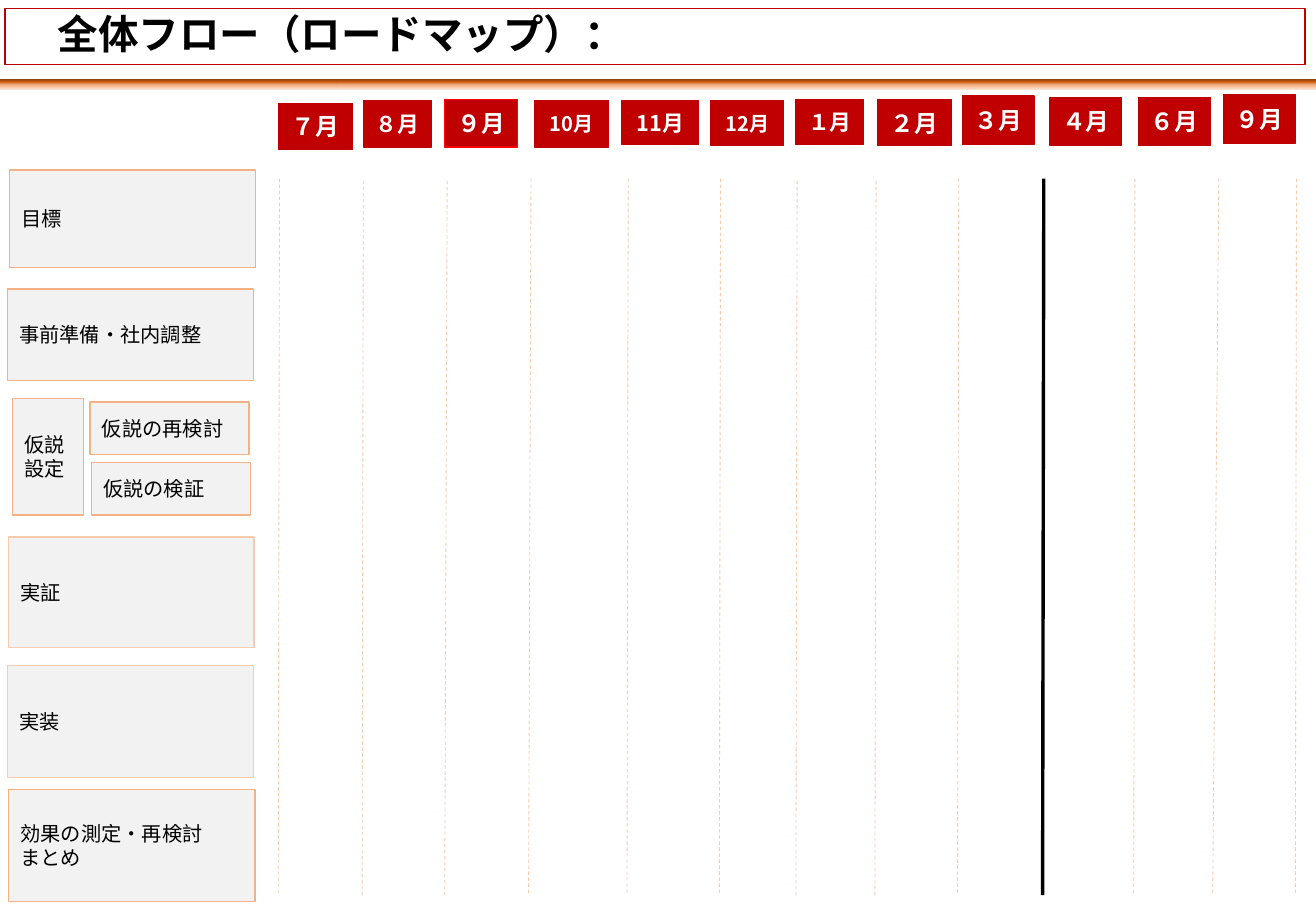
from dataclasses import dataclass

from lxml import etree
from pptx import Presentation
from pptx.dml.color import RGBColor
from pptx.enum.dml import MSO_LINE
from pptx.enum.shapes import MSO_CONNECTOR, MSO_SHAPE
from pptx.enum.text import MSO_ANCHOR, MSO_AUTO_SIZE, PP_ALIGN
from pptx.oxml.ns import qn
from pptx.util import Inches, Pt

RECT, STRAIGHT = MSO_SHAPE.RECTANGLE, MSO_CONNECTOR.STRAIGHT
LEFT, CENTER = PP_ALIGN.LEFT, PP_ALIGN.CENTER
MIDDLE, DASH = MSO_ANCHOR.MIDDLE, MSO_LINE.DASH
FIXED = MSO_AUTO_SIZE.NONE
CELL = Inches(0.1)  # grid of 108.3 columns by 75 rows


@dataclass(frozen=True)
class Theme:
    font: str = "Noto Sans CJK JP"
    ink: str = "000000"
    paper: str = "FFFFFF"
    red: str = "C00000"
    alert: str = "FF0000"
    panel: str = "F2F2F2"
    edge: str = "F4B183"
    pale: str = "F8CBAD"
    band: tuple = ((0, "843C0B"), (25, "C55A11"), (56, "F4B183"),
                   (79, "F8CBAD"), (100, "FBE5D6"))
    head: float = 24
    body: float = 12
    lead: float = 14.2
    large: float = 14
    mid: float = 12.9
    small: float = 11.9
    border: float = 0.75
    hair: float = 0.5
    thick: float = 2


def grid(*cells):
    return [round(cell * CELL) for cell in cells]


def paint(fill, color):
    fill.solid()
    fill.fore_color.rgb = RGBColor.from_string(color)


class Board:
    def __init__(self, slide, theme):
        self.slide, self.theme = slide, theme

    def stroke(self, line, color, width):
        paint(line.fill, color)
        line.width = Pt(width)

    def letter(self, shape, text, size, color, bold=False, align=LEFT, wrap=True):
        frame = shape.text_frame
        frame.text = text
        frame.word_wrap = wrap
        frame.auto_size = FIXED
        frame.vertical_anchor = MIDDLE
        for para in frame.paragraphs:
            para.alignment = align
            for run in para.runs:
                font = run.font
                font.name, font.size, font.bold = self.theme.font, Pt(size), bold
                font.color.rgb = RGBColor.from_string(color)
                east = etree.SubElement(font._element, qn("a:ea"))
                east.set("typeface", self.theme.font)

    def title(self, text, *box):
        shape = self.slide.shapes.title
        shape.left, shape.top, shape.width, shape.height = grid(*box)
        self.stroke(shape.line, self.theme.red, self.theme.border)
        self.letter(shape, text, self.theme.head, self.theme.ink, True)
        shape.text_frame.paragraphs[0].line_spacing = 0.9

    def rect(self, *box):
        shape = self.slide.shapes.add_shape(RECT, *grid(*box))
        shape.shadow.inherit = False
        return shape

    def label(self, text, edge, *box):
        shape = self.rect(*box)
        paint(shape.fill, self.theme.panel)
        self.stroke(shape.line, edge, self.theme.border)
        self.letter(shape, text, self.theme.body, self.theme.ink)
        for para in shape.text_frame.paragraphs:
            para.line_spacing = Pt(self.theme.lead)

    def month(self, text, size, edge, *box):
        shape = self.rect(*box)
        paint(shape.fill, self.theme.red)
        self.stroke(shape.line, edge, self.theme.border)
        self.letter(shape, text, size, self.theme.paper, True, CENTER, False)

    def band(self, *box):
        shape = self.rect(*box)
        shape.line.fill.background()
        shape.fill.gradient()
        shape.fill.gradient_angle = 270
        stops = shape._element.spPr.find(qn("a:gradFill")).find(qn("a:gsLst"))
        for stop in list(stops):
            stops.remove(stop)
        for share, color in self.theme.band:
            stop = etree.SubElement(stops, qn("a:gs"), pos=str(share * 1000))
            etree.SubElement(stop, qn("a:srgbClr"), val=color)

    def rule(self, color, width, dash, *ends):
        line = self.slide.shapes.add_connector(STRAIGHT, *grid(*ends))
        self.stroke(line.line, color, width)
        if dash:
            line.line.dash_style = dash
        etree.SubElement(line._element.spPr, qn("a:effectLst"))


def main():
    deck = Presentation()
    deck.slide_width, deck.slide_height = grid(108.3, 75)
    theme = Theme()
    board = Board(deck.slides.add_slide(deck.slide_layouts[5]), theme)

    # Title and the band below it
    board.title("　全体フロー（ロードマップ）：", 0.4, 0.7, 107, 4.6)
    for left, width in ((27.7, 80.6), (0, 27.7)):
        board.band(left, 6.5, width, 0.9)

    # Phases down the left side
    edge, pale = theme.edge, theme.pale
    for text, color, *box in (
        ("目標", edge, 0.8, 14, 20.2, 8),
        ("事前準備・社内調整", edge, 0.6, 23.8, 20.3, 7.5),
        ("仮説設定", edge, 1, 32.8, 5.9, 9.6),
        ("仮説の再検討", edge, 7.4, 33.1, 13.1, 4.3),
        ("仮説の検証", edge, 7.5, 38.1, 13.1, 4.3),
        ("実証", pale, 0.7, 44.2, 20.2, 9.1),
        ("実装", pale, 0.6, 54.8, 20.3, 9.2),
        ("効果の測定・再検討\nまとめ", edge, 0.7, 65, 20.3, 9.2),
    ):
        board.label(text, color, *box)

    # Month dividers: top column, top row, lean to the left
    for col, row, lean in (
        (23, 14.7, 0.1), (29.9, 14.9, 0.1), (36.8, 14.9, 0.2),
        (43.7, 14.7, 0.2), (51.7, 14.7, 0.1), (59.3, 14.7, 0.1),
        (65.6, 14.9, 0.1), (72.1, 14.9, 0.1), (78.9, 14.7, 0.1),
        (93.4, 14.7, 0.1), (100.3, 14.7, 0.5), (106.7, 14.7, 0.1),
    ):
        board.rule(pale, theme.hair, DASH, col, row, col - lean, row + 59)

    # Year-end divider
    board.rule(theme.ink, theme.thick, None, 85.9, 14.7, 85.8, 73.7)

    # Month headings
    red, large, mid, small = theme.red, theme.large, theme.mid, theme.small
    for text, size, color, *box in (
        ("７月", large, red, 22.9, 8.5, 6.1, 3.8),
        ("８月", mid, red, 29.9, 8.3, 5.6, 3.8),
        ("９月", large, theme.alert, 36.6, 8.2, 6, 3.9),
        ("10月", small, red, 44, 8.3, 6.1, 3.8),
        ("11月", mid, red, 51.2, 8.3, 6.3, 3.6),
        ("12月", small, red, 58.5, 8.3, 6, 3.7),
        ("１月", mid, red, 65.5, 8.2, 5.6, 3.7),
        ("２月", large, red, 72.2, 8.2, 6.1, 3.8),
        ("３月", large, red, 79.2, 7.9, 5.9, 4),
        ("４月", large, red, 86.4, 8, 5.9, 4),
        ("６月", large, red, 93.7, 8, 5.9, 4),
        ("９月", large, red, 100.7, 7.8, 5.9, 4),
    ):
        board.month(text, size, color, *box)

    deck.save("out.pptx")


if __name__ == "__main__":
    main()
